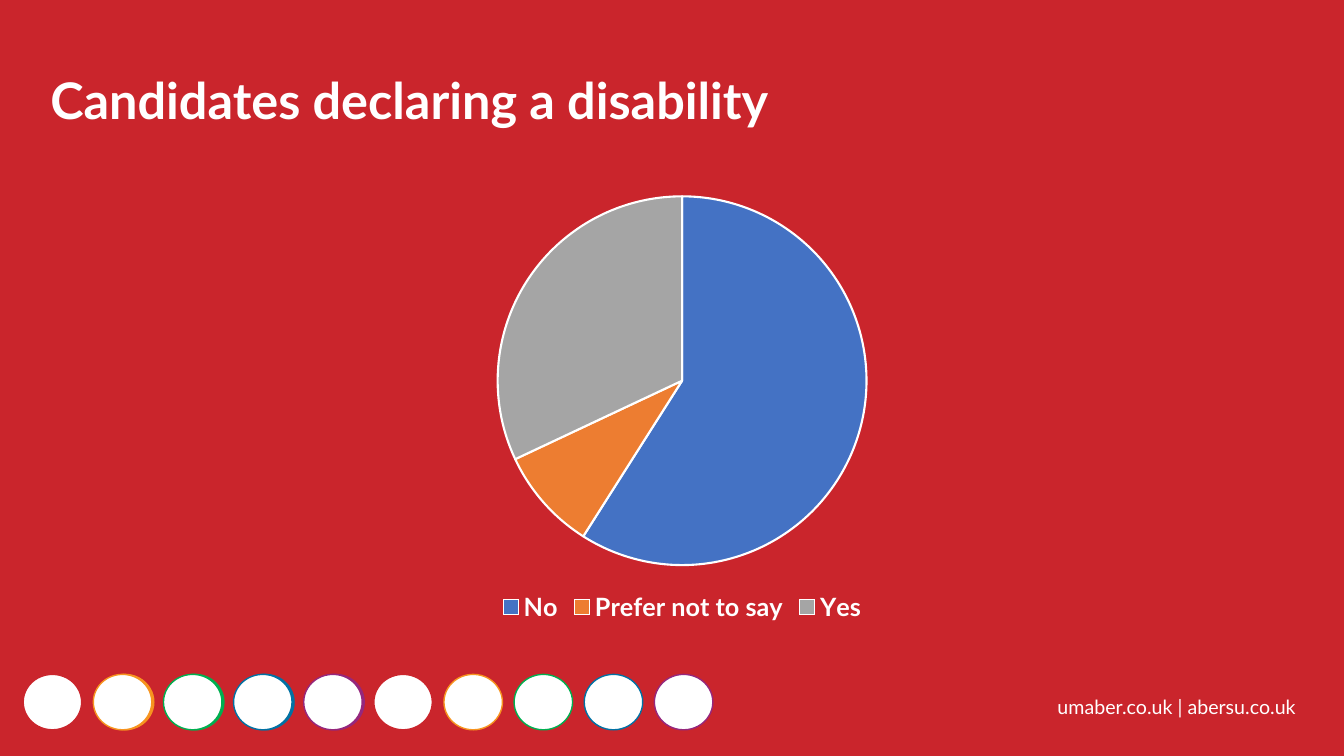
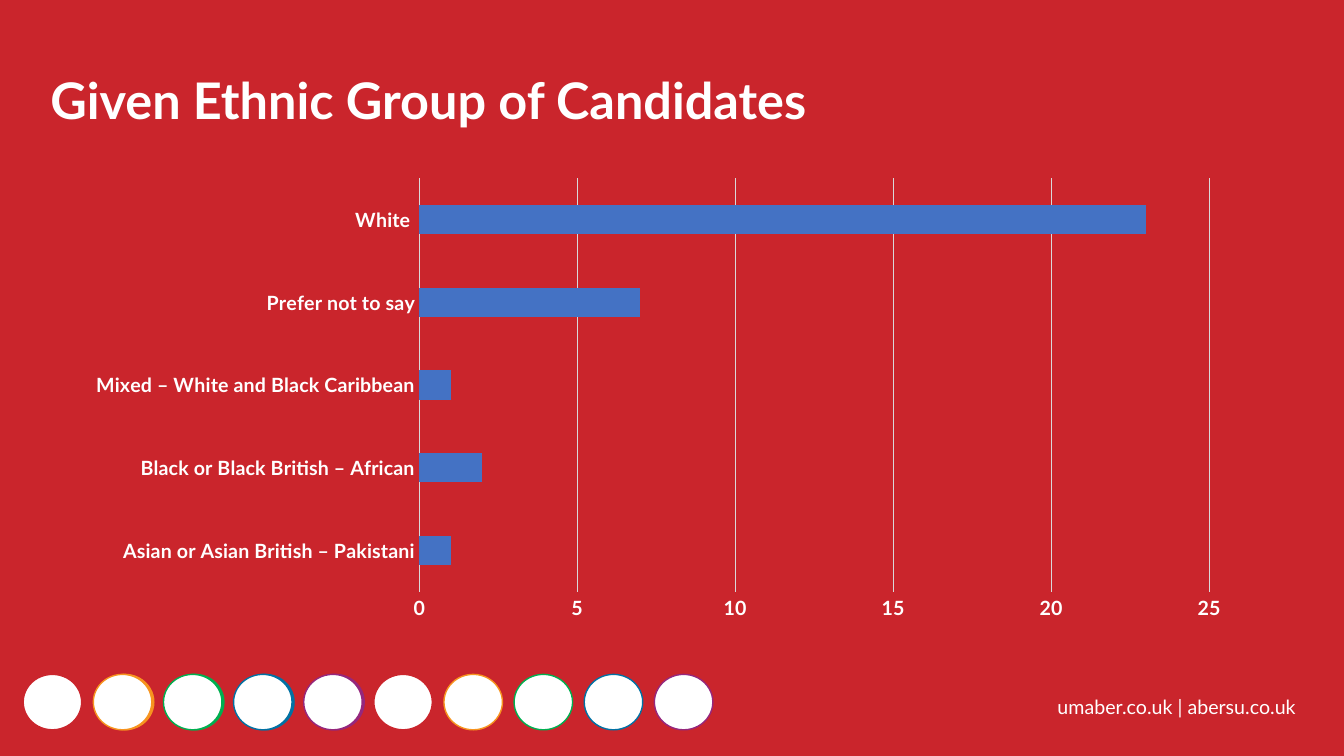
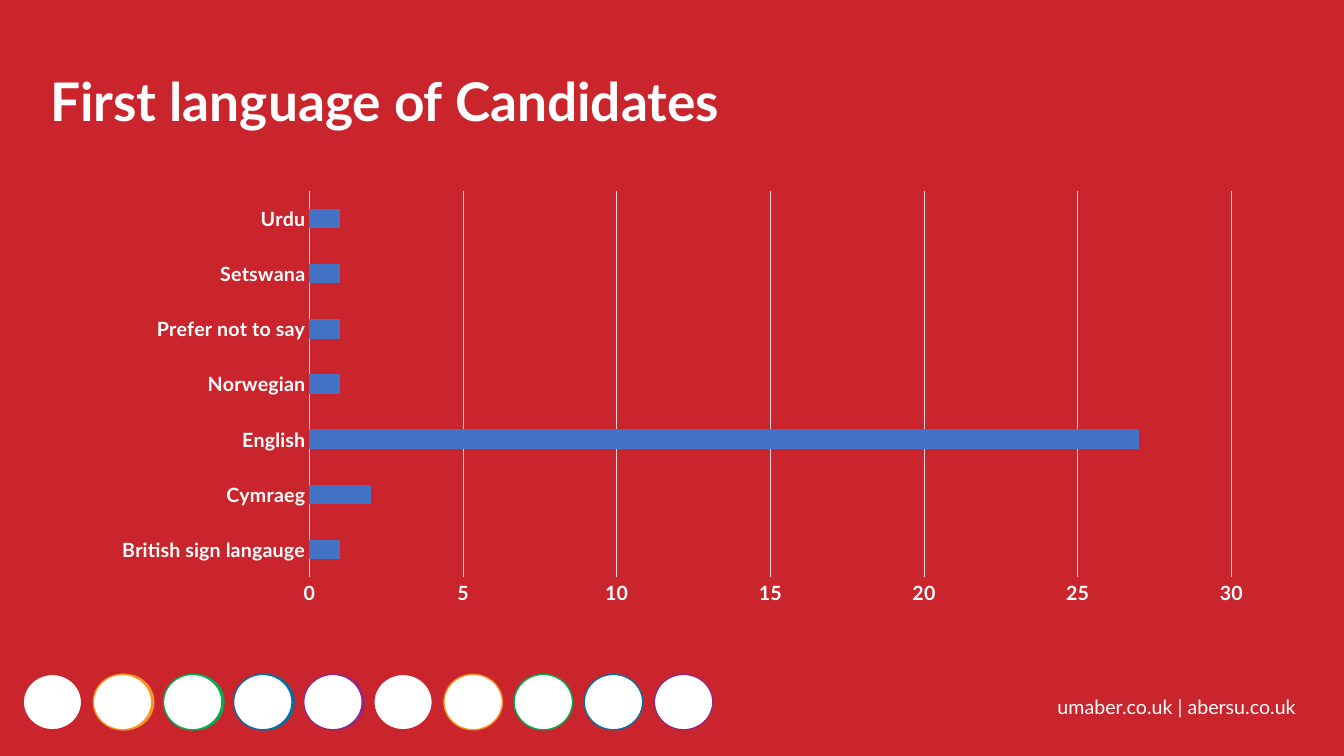
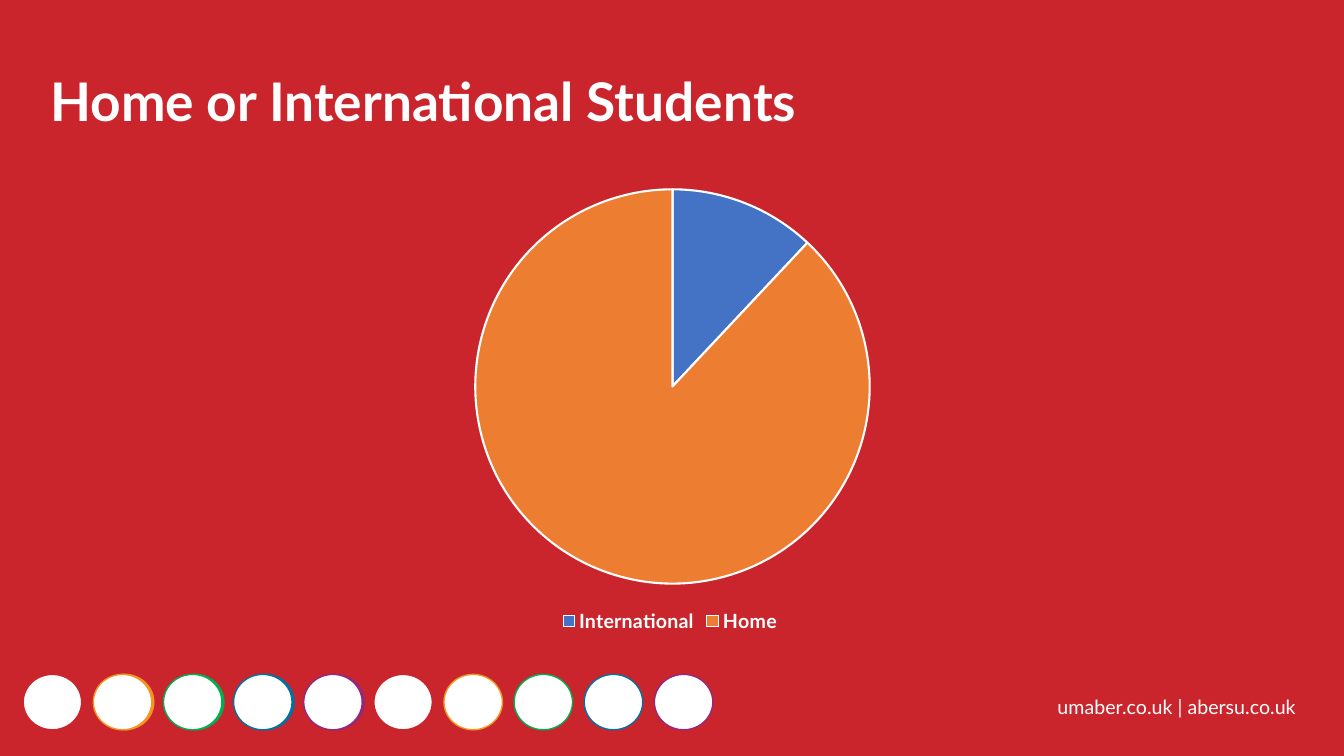
"""Build four slides of charts about election candidates."""
from pptx import Presentation
from pptx.chart.data import CategoryChartData
from pptx.dml.color import RGBColor
from pptx.enum import chart as ch, shapes
from pptx.util import Inches, Pt

WHITE = RGBColor(0xFF, 0xFF, 0xFF)
RED = RGBColor(0xCA, 0x25, 0x2C)
AMBER = RGBColor(0xF7, 0x94, 0x1F)
GREEN = RGBColor(0x00, 0xAF, 0x50)
TEAL = RGBColor(0x01, 0x71, 0xA3)
PLUM = RGBColor(0x95, 0x27, 0x7D)
BLUE = RGBColor(0x44, 0x72, 0xC4)
ORANGE = RGBColor(0xED, 0x7D, 0x31)
GREY = RGBColor(0xA5, 0xA5, 0xA5)
PALE = RGBColor(0xD9, 0xD9, 0xD9)
RINGS = [RED, AMBER, GREEN, TEAL, PLUM]
SLICES = [BLUE, ORANGE, GREY]
FACE = "Lato"
STEP = 6.26 / 9


def style(font, size, bold=True):
    font.name = FACE
    font.size = Pt(size)
    font.bold = bold
    font.color.rgb = WHITE


def add_text(slide, box, words, size, bold=True, space=None):
    frame = slide.shapes.add_textbox(*map(Inches, box)).text_frame
    frame.word_wrap = True
    para = frame.paragraphs[0]
    para.text = words
    para.line_spacing = space
    style(para.font, size, bold)


def add_disc(slide, left, fill, line):
    disc = slide.shapes.add_shape(
        shapes.MSO_SHAPE.OVAL, Inches(left), Inches(6.69), Inches(0.58), Inches(0.55))
    disc.shadow.inherit = False
    disc.fill.solid()
    disc.fill.fore_color.rgb = fill
    disc.line.color.rgb = line
    disc.line.width = Pt(1)


def add_page(prs, title, size):
    slide = prs.slides.add_slide(prs.slide_layouts[6])
    add_text(slide, (10.39, 6.84, 2.8, 0.34), "umaber.co.uk | abersu.co.uk", 14, False)
    for i, ring in enumerate(RINGS):
        add_disc(slide, 0.25 + i * STEP, ring, ring)
    for i, ring in enumerate(RINGS * 2):
        add_disc(slide, 0.23 + i * STEP, WHITE, ring)
    add_text(slide, (0.4, 0.7, 11.42, 0.88), title, size, space=0.9)
    return slide


def add_chart(slide, kind, box, data, size):
    table = CategoryChartData()
    table.categories = list(data)
    table.add_series("Series 1", list(data.values()))
    chart = slide.shapes.add_chart(kind, *map(Inches, box), table).chart
    chart.has_title = False
    style(chart.font, size)
    return chart


def add_pie(slide, box, data, size):
    chart = add_chart(slide, ch.XL_CHART_TYPE.PIE, box, data, size)
    chart.has_legend = True
    chart.legend.position = ch.XL_LEGEND_POSITION.BOTTOM
    chart.legend.include_in_layout = False
    style(chart.legend.font, size)
    plot = chart.plots[0]
    plot.vary_by_categories = True
    for i in range(len(data)):
        part = plot.series[0].points[i].format
        part.fill.solid()
        part.fill.fore_color.rgb = SLICES[i]
        part.line.color.rgb = WHITE
        part.line.width = Pt(1.5)


def add_bars(slide, box, data, top):
    chart = add_chart(slide, ch.XL_CHART_TYPE.BAR_CLUSTERED, box, data, 14)
    chart.has_legend = False
    plot = chart.plots[0]
    plot.vary_by_categories = False
    plot.gap_width = 182
    fill = plot.series[0].format.fill
    fill.solid()
    fill.fore_color.rgb = BLUE
    cats, vals = chart.category_axis, chart.value_axis
    for axis in (cats, vals):
        axis.major_tick_mark = axis.minor_tick_mark = ch.XL_TICK_MARK.NONE
        style(axis.tick_labels.font, 14)
    cats.has_major_gridlines = False
    vals.has_major_gridlines = True
    for line in (cats.format.line, vals.major_gridlines.format.line):
        line.color.rgb = PALE
        line.width = Pt(0.75)
    vals.format.line.fill.background()
    vals.minimum_scale, vals.maximum_scale, vals.major_unit = 0, top, 5


def main():
    prs = Presentation()
    prs.slide_width, prs.slide_height = Inches(13.33), Inches(7.5)
    back = prs.slide_master.background.fill
    back.solid()
    back.fore_color.rgb = RED

    page = add_page(prs, "Candidates declaring a disability", 36)
    add_pie(page, (1.19, 1.81, 11.15, 4.41),
            {"No": 59, "Prefer not to say": 9, "Yes": 32}, 18)

    page = add_page(prs, "Given Ethnic Group of Candidates", 36)
    add_bars(page, (0.72, 1.68, 11.62, 4.56), {
        "Asian or Asian British – Pakistani": 1,
        "Black or Black British – African": 2,
        "Mixed – White and Black Caribbean": 1,
        "Prefer not to say": 7,
        "White ": 23,
    }, 25)

    page = add_page(prs, "First language of Candidates", 38)
    add_bars(page, (0.98, 1.81, 11.58, 4.28), {
        "British sign langauge": 1,
        "Cymraeg": 2,
        "English": 27,
        "Norwegian": 1,
        "Prefer not to say": 1,
        "Setswana": 1,
        "Urdu": 1,
    }, 30)

    page = add_page(prs, "Home or International Students", 38)
    add_pie(page, (1.64, 1.74, 10.06, 4.58), {"International": 12, "Home ": 88}, 14)

    prs.save("out.pptx")


if __name__ == "__main__":
    main()
